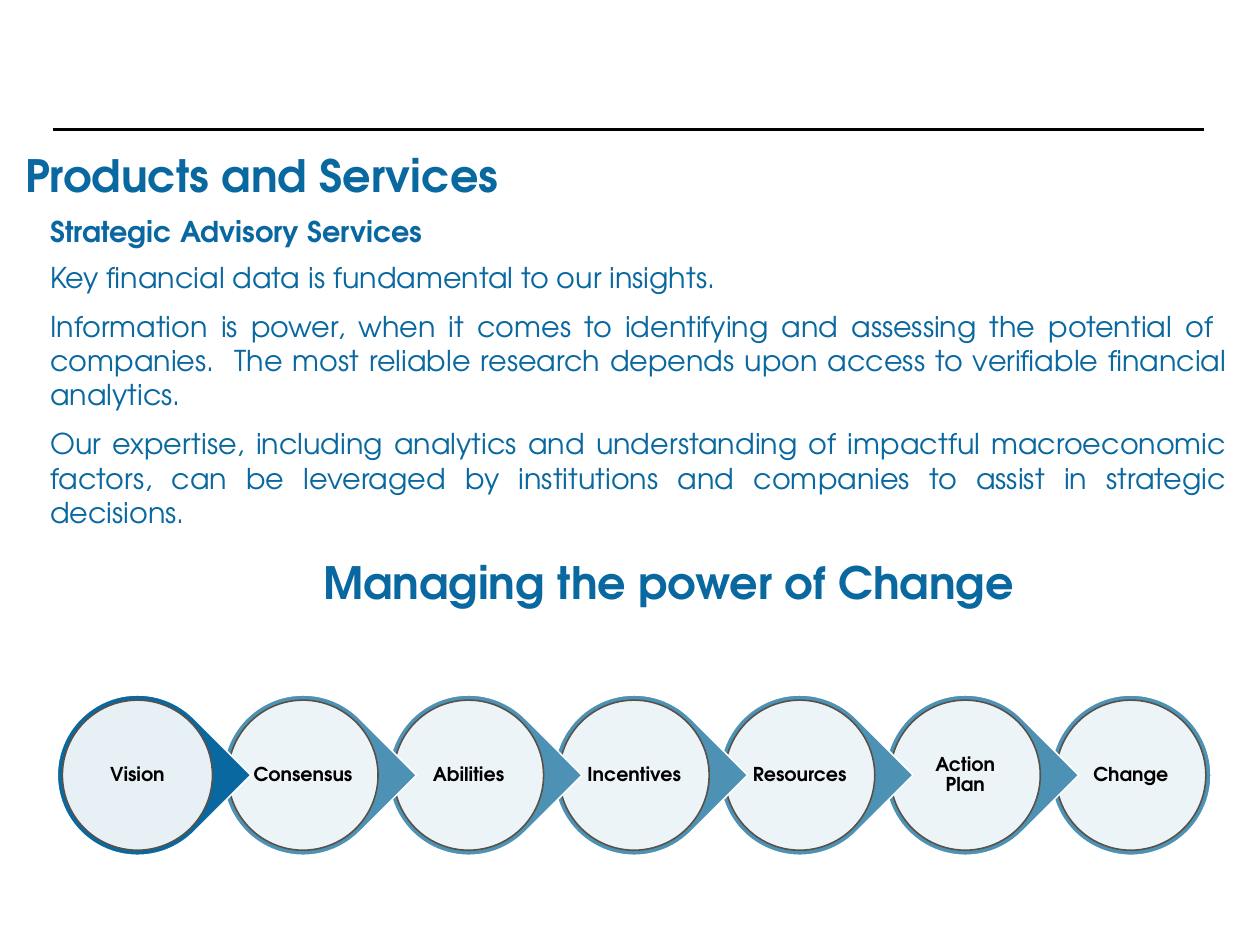
import pptx
import pptx.dml.color
import pptx.enum.shapes
import pptx.enum.text
import pptx.oxml
import pptx.oxml.ns
import pptx.util
import lxml.etree

SHAPE = pptx.enum.shapes.MSO_SHAPE
ALIGN = pptx.enum.text.PP_ALIGN
ANCHOR = pptx.enum.text.MSO_ANCHOR

WIDTH = pptx.util.Inches(11)
HEIGHT = pptx.util.Inches(8.25)
FONT = "TeX Gyre Adventor"
COLORS = {
    "heading": "0968A0",
    "first": "09689F",
    "later": "4D92B4",
    "disc": "FFFFFF",
    "outline": "FFFFFF",
    "disc_edge": "585148",
    "ink": "000000",
}

STAGES = ["Vision", "Consensus", "Abilities", "Incentives", "Resources", "Action Plan", "Change"]
FIRST_CENTER, STAGE_PITCH, STAGE_ROW = 10.91, 13.14, 82.03
DROP_SIZE, DISC_SIZE, LABEL_SIZE = 12.73, 11.91, 8.45

TITLE = {"size": pptx.util.Pt(28), "bold": True}
SUBTITLE = {"size": pptx.util.Pt(18), "bold": True}
BODY = {"size": pptx.util.Pt(18), "bold": False}
LABEL = {"size": pptx.util.Pt(12), "bold": True}

SERVICES = [
    "Key financial data is fundamental to our insights.",
    "Information is power, when it comes to identifying and assessing the potential of  companies.  "
    "The most reliable research depends upon access to verifiable financial analytics.",
    "Our expertise, including analytics and understanding of impactful macroeconomic factors, "
    "can be leveraged by institutions and companies to assist in strategic decisions.",
]


def color(key):
    return pptx.dml.color.RGBColor.from_string(COLORS[key])


def across(percent):
    return round(WIDTH * percent / 100)


def down(percent):
    return round(HEIGHT * percent / 100)


def area(left, top, width, height):
    return across(left), down(top), across(width), down(height)


def square(center, size):
    side = across(size)
    return across(center) - side // 2, down(STAGE_ROW) - side // 2, side, side


def apply(target, values):
    for key, value in values.items():
        setattr(target, key, value)


def add_text(shapes, bounds, paragraphs, font, ink="heading", frame_format=None, paragraph_format=None):
    frame = shapes.add_textbox(*bounds).text_frame
    apply(frame, {"word_wrap": True, **(frame_format or {})})
    for index, text in enumerate(paragraphs):
        paragraph = frame.paragraphs[0] if index == 0 else frame.add_paragraph()
        apply(paragraph, paragraph_format or {})
        if index:
            paragraph.space_before = pptx.util.Pt(9)
        run = paragraph.add_run()
        run.text = text
        apply(run.font, {"name": FONT, **font})
        run.font.color.rgb = color(ink)


def add_rule(shapes):
    rule = shapes.add_connector(
        pptx.enum.shapes.MSO_CONNECTOR.STRAIGHT,
        across(4.18), down(13.7), across(95.55), down(13.7),
    )
    rule.line.color.rgb = color("ink")
    rule.line.width = pptx.util.Pt(2)
    lxml.etree.SubElement(rule._element.spPr, pptx.oxml.ns.qn("a:effectLst"))


def add_round(shapes, preset, bounds, fill, edge):
    outline = shapes.add_shape(preset, *bounds)
    outline.shadow.inherit = False
    outline.fill.solid()
    outline.fill.fore_color.rgb = color(fill)
    outline.line.color.rgb = color(edge)
    outline.line.width = pptx.util.Pt(1)
    return outline


def set_opacity(shape, percent):
    tone = shape._element.spPr.find(".//" + pptx.oxml.ns.qn("a:srgbClr"))
    alpha = lxml.etree.SubElement(tone, pptx.oxml.ns.qn("a:alpha"))
    alpha.set("val", str(percent * 1000))


def add_stage(shapes, index):
    center = FIRST_CENTER + index * STAGE_PITCH
    is_last = index == len(STAGES) - 1
    preset = SHAPE.OVAL if is_last else SHAPE.TEAR
    drop = add_round(shapes, preset, square(center, DROP_SIZE), "later" if index else "first", "outline")
    if not is_last:
        drop.adjustments[0] = 1
        drop.rotation = 45
    disc = add_round(shapes, SHAPE.OVAL, square(center, DISC_SIZE), "disc", "disc_edge")
    set_opacity(disc, 90)
    inset = pptx.util.Inches(0.02)
    margins = {"margin_" + side: inset for side in ("left", "top", "right", "bottom")}
    add_text(
        shapes, square(center, LABEL_SIZE), [STAGES[index]], LABEL, "ink",
        {"vertical_anchor": ANCHOR.MIDDLE, **margins},
        {"alignment": ALIGN.CENTER, "line_spacing": 0.9},
    )


def main():
    deck = pptx.Presentation()
    apply(deck, {"slide_width": WIDTH, "slide_height": HEIGHT})
    shapes = deck.slides.add_slide(deck.slide_layouts[6]).shapes

    add_rule(shapes)
    add_text(shapes, area(1.09, 15.03, 96.64, 6.91), ["Products and Services"], TITLE)
    chain = shapes.add_group_shape().shapes
    for index in reversed(range(len(STAGES))):
        add_stage(chain, index)
    add_text(
        shapes, area(12.64, 58.18, 80.82, 6.91), ["Managing the power of Change"], TITLE,
        paragraph_format={"alignment": ALIGN.CENTER},
    )
    add_text(shapes, area(3.09, 22.06, 54.73, 4.85), ["Strategic Advisory Services"], SUBTITLE)
    add_text(
        shapes, area(3.09, 26.91, 95.18, 30.55), SERVICES, BODY,
        paragraph_format={"alignment": ALIGN.JUSTIFY},
    )
    deck.save("out.pptx")


if __name__ == "__main__":
    main()
